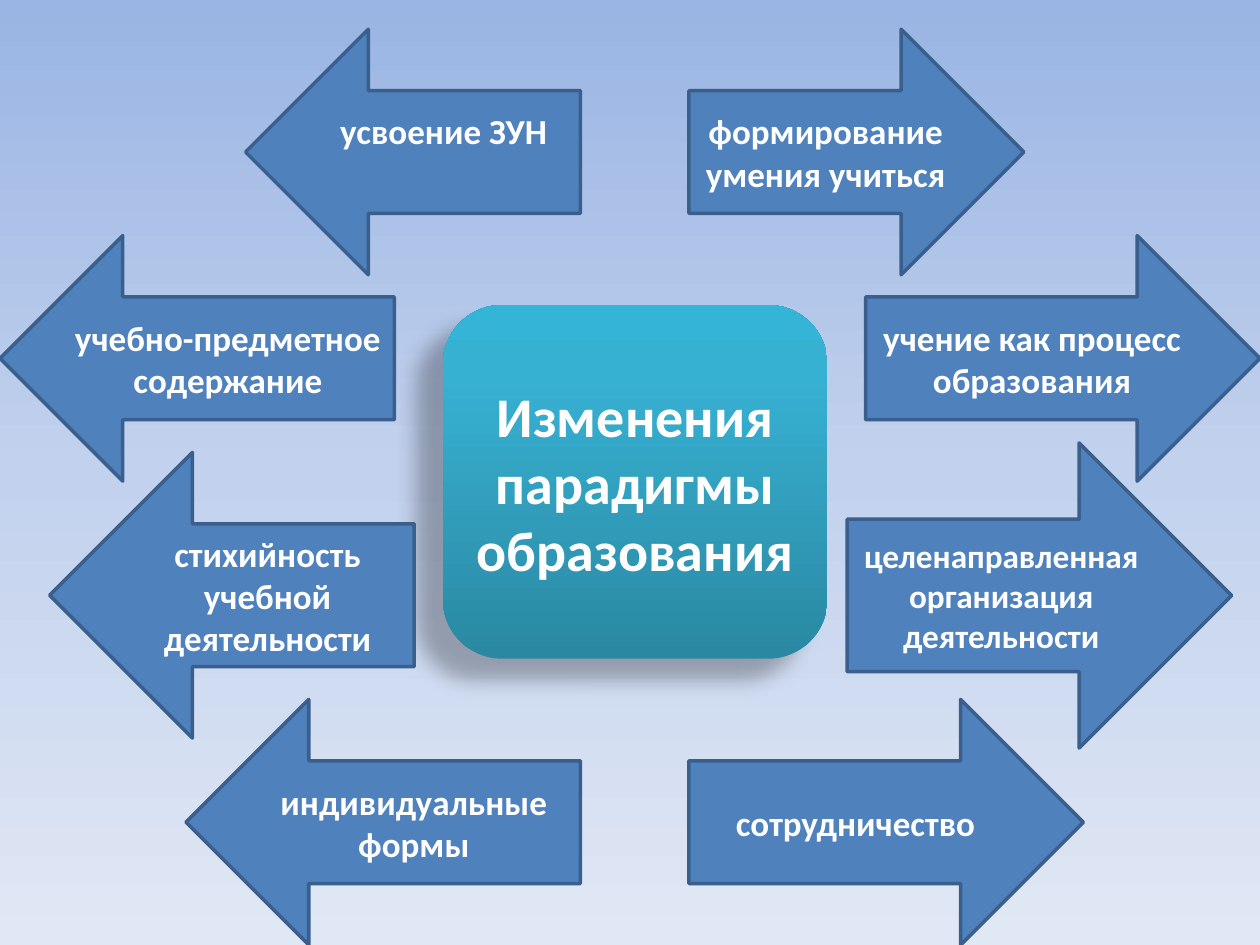
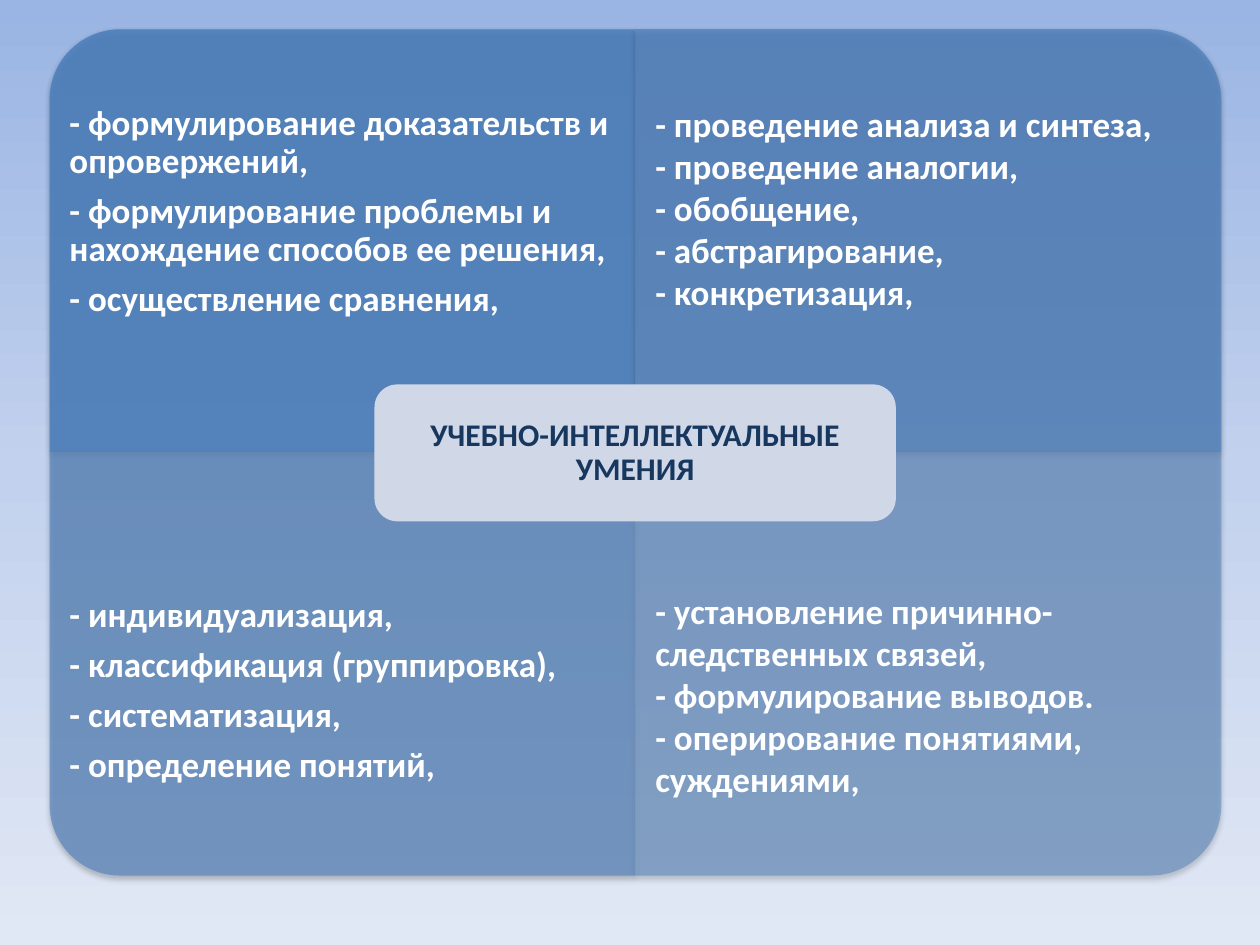
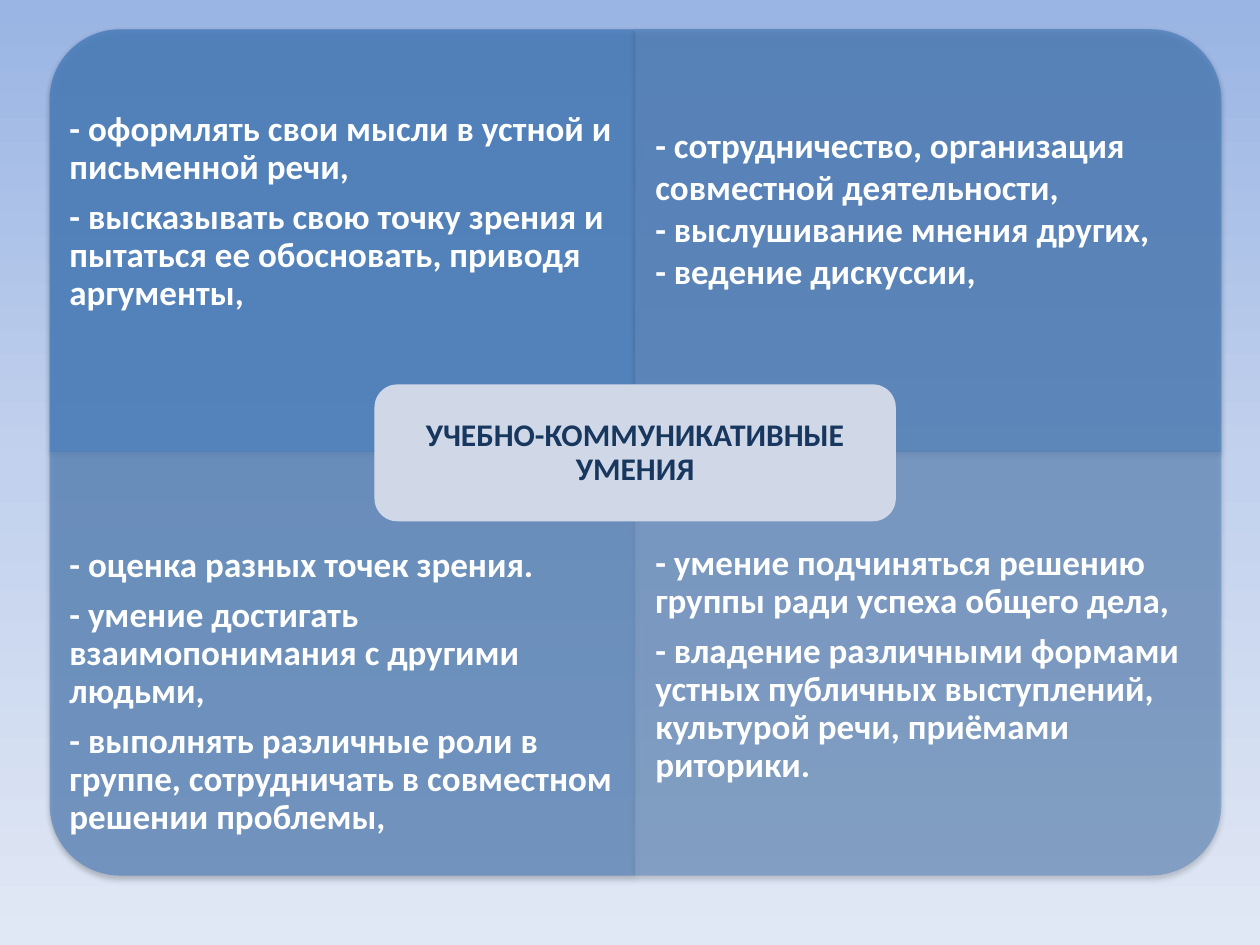
"""Build three slides on the changing paradigm of education and learning skills."""
from dataclasses import dataclass

from lxml import etree
from pptx import Presentation
from pptx.dml.color import RGBColor
from pptx.enum.shapes import MSO_SHAPE
from pptx.enum.text import MSO_ANCHOR, MSO_AUTO_SIZE, PP_ALIGN
from pptx.oxml.ns import qn
from pptx.util import Cm, Pt

LEFT_ARROW, RIGHT_ARROW = MSO_SHAPE.LEFT_ARROW, MSO_SHAPE.RIGHT_ARROW
CENTRE_BOX = MSO_SHAPE.FLOWCHART_ALTERNATE_PROCESS
CORNER_PANEL = MSO_SHAPE.ROUND_1_RECTANGLE
LABEL_BOX = MSO_SHAPE.ROUNDED_RECTANGLE
TOP, MIDDLE = MSO_ANCHOR.TOP, MSO_ANCHOR.MIDDLE
LEFT, CENTER = PP_ALIGN.LEFT, PP_ALIGN.CENTER
NO_AUTOFIT = MSO_AUTO_SIZE.NONE

FONT = "Calibri"
WHITE, NAVY = "FFFFFF", "17375E"
BLUE, BLUE_EDGE, PALE_BLUE = "4F81BD", "3A5F8C", "D0D8E8"
SKY = [(0, "9AB5E4"), (50, "C2D1ED"), (100, "E1E8F5")]
TEAL = [(0, "2A88A2"), (80, "37B1D2"), (100, "34B4D6")]

BLANK_LAYOUT, COMPARISON_LAYOUT = 6, 4
GRID_LEFT, GRID_TOP = 1.0, 0.59
PANEL_WIDTH, PANEL_HEIGHT, LIST_HEIGHT = 11.81, 8.53, 6.4
PANEL_STYLES = [(270, 90), (0, 77), (180, 63), (90, 50)]
LABEL = (7.55, 7.75, 10.51, 2.76)
LABEL_MARGIN = 0.13


@dataclass
class Arrow:
    """An arrow naming one feature of the old or the new paradigm."""
    text: str
    direction: int
    left: float
    top: float
    width: float
    height: float = 4.95
    size: float = 20
    bottom_inset: float = 0.13


@dataclass
class SkillList:
    """The skills in one panel; text_top is where the first line begins."""
    text_top: float
    skills: list[str]
    tight: bool = True


ARROWS = [
    Arrow("формирование умения учиться", RIGHT_ARROW, 13.89, 0.59, 6.75),
    Arrow("усвоение ЗУН", LEFT_ARROW, 4.95, 0.59, 6.75, bottom_inset=0.99),
    Arrow("учебно-предметное содержание", LEFT_ARROW, 0, 4.75, 7.95),
    Arrow("стихийность учебной деятельности", LEFT_ARROW, 1, 9.12, 7.35, 5.76),
    Arrow("учение как процесс образования", RIGHT_ARROW, 17.45, 4.75, 7.95),
    Arrow("целенаправленная организация деятельности", RIGHT_ARROW,
          17.08, 8.93, 7.75, 6.15, size=19),
    Arrow("индивидуальные формы", LEFT_ARROW, 3.75, 14.1, 7.95),
    Arrow("сотрудничество", RIGHT_ARROW, 13.89, 14.1, 7.95),
]

SKILL_SLIDES = {
    "УЧЕБНО-ИНТЕЛЛЕКТУАЛЬНЫЕ УМЕНИЯ": [
        SkillList(2.13, [
            "- формулирование доказательств и опровержений,",
            "- формулирование проблемы и нахождение способов ее решения,",
            "- осуществление сравнения,"]),
        SkillList(2.06, [
            "- проведение анализа и синтеза,",
            "- проведение аналогии,",
            "- обобщение,",
            "- абстрагирование,",
            "- конкретизация,"], tight=False),
        SkillList(12.04, [
            "- индивидуализация,",
            "- классификация (группировка),",
            "- систематизация,",
            "- определение понятий,"]),
        SkillList(11.88, [
            "- установление причинно-следственных связей,",
            "- формулирование выводов.",
            "- оперирование понятиями, суждениями,"], tight=False),
    ],
    "УЧЕБНО-КОММУНИКАТИВНЫЕ УМЕНИЯ": [
        SkillList(2.25, [
            "- оформлять свои мысли в устной и письменной речи,",
            "- высказывать свою точку зрения и пытаться ее обосновать, "
            "приводя аргументы,"]),
        SkillList(2.49, [
            "- сотрудничество, организация совместной деятельности,",
            "- выслушивание мнения других,",
            "- ведение дискуссии,"], tight=False),
        SkillList(11.04, [
            "- оценка разных точек зрения.",
            "- умение достигать взаимопонимания с другими людьми,",
            "- выполнять различные роли в группе, сотрудничать в совместном "
            "решении проблемы,"]),
        SkillList(11.0, [
            "- умение подчиняться решению группы ради успеха общего дела,",
            "- владение различными формами устных публичных выступлений, "
            "культурой речи, приёмами риторики."]),
    ],
}


def rgb(value: str) -> RGBColor:
    """Turn a hex string into a colour."""
    return RGBColor.from_string(value)


def add_gradient(parent, stops: list[tuple[int, str]], angle: int) -> None:
    """Replace the solid fill inside parent with a linear gradient."""
    gradient = etree.Element(qn("a:gradFill"), rotWithShape="1")
    stop_list = etree.SubElement(gradient, qn("a:gsLst"))
    for position, color in stops:
        stop = etree.SubElement(stop_list, qn("a:gs"), pos=str(position * 1000))
        etree.SubElement(stop, qn("a:srgbClr"), val=color)
    etree.SubElement(gradient, qn("a:lin"), ang=str(angle * 60000), scaled="0")
    parent.replace(parent.find(qn("a:solidFill")), gradient)


def add_shadow(shape, opacity: int, blur: float, distance: float, angle: int) -> None:
    """Give a shape a black outer shadow."""
    effects = shape.element.spPr.find(qn("a:effectLst"))
    shadow = etree.SubElement(
        effects, qn("a:outerShdw"), blurRad=str(Pt(blur)), dist=str(Pt(distance)),
        dir=str(angle * 60000), rotWithShape="0")
    color = etree.SubElement(shadow, qn("a:srgbClr"), val="000000")
    etree.SubElement(color, qn("a:alpha"), val=str(opacity * 1000))


def add_box(slide, kind: int, left: float, top: float, width: float, height: float,
            fill: str, edge: str = ""):
    """Draw a filled preset shape, measured in centimetres."""
    box = slide.shapes.add_shape(kind, Cm(left), Cm(top), Cm(width), Cm(height))
    box.shadow.inherit = False
    box.fill.solid()
    box.fill.fore_color.rgb = rgb(fill)
    if edge:
        box.line.color.rgb = rgb(edge)
        box.line.width = Pt(2)
    else:
        box.line.fill.background()
    return box


def write_text(shape, lines: list[str], *, size: float = 20, color: str = WHITE,
               align: int = CENTER, anchor: int = MIDDLE, spacing: float = 1.0,
               gap: float = 0, insets: tuple = (0.25, 0.13, 0.25, 0.13)) -> None:
    """Write bold paragraphs without bullets into a shape."""
    frame = shape.text_frame
    frame.word_wrap = True
    frame.auto_size = NO_AUTOFIT
    frame.vertical_anchor = anchor
    (frame.margin_left, frame.margin_top,
     frame.margin_right, frame.margin_bottom) = map(Cm, insets)
    for number, line in enumerate(lines):
        paragraph = frame.add_paragraph() if number else frame.paragraphs[0]
        properties = paragraph._p.get_or_add_pPr()
        properties.set("marL", "0")
        properties.set("indent", "0")
        etree.SubElement(properties, qn("a:buNone"))
        paragraph.alignment = align
        paragraph.line_spacing = spacing
        paragraph.space_before = Pt(0)
        paragraph.space_after = Pt(gap)
        run = paragraph.add_run()
        run.text = line
        run.font.name = FONT
        run.font.size = Pt(size)
        run.font.bold = True
        run.font.color.rgb = rgb(color)


def place_on_top(placeholder, left: float, top: float, width: float,
                 height: float) -> None:
    """Move a placeholder to a frame in front of everything drawn so far."""
    placeholder.left, placeholder.top = Cm(left), Cm(top)
    placeholder.width, placeholder.height = Cm(width), Cm(height)
    placeholder.element.getparent().append(placeholder.element)


def add_panel(slide, left: float, top: float, rotation: int, opacity: int) -> None:
    """Draw a quarter panel whose rounded corner faces outwards."""
    width, height = PANEL_WIDTH, PANEL_HEIGHT
    if rotation % 180:
        left += (width - height) / 2
        top += (height - width) / 2
        width, height = height, width
    panel = add_box(slide, CORNER_PANEL, left, top, width, height, BLUE)
    panel.rotation = rotation
    color = panel.element.spPr.find(qn("a:solidFill"))[0]
    etree.SubElement(color, qn("a:alpha"), val=str(opacity * 1000))
    add_shadow(panel, 35, 3.1, 1.8, 90)


def add_paradigm_slide(prs) -> None:
    """Show the paradigm in the centre, with arrows to the old and new features."""
    slide = prs.slides.add_slide(prs.slide_layouts[BLANK_LAYOUT])
    centre = add_box(slide, CENTRE_BOX, 8.93, 6.15, 7.75, 7.13, TEAL[0][1])
    add_gradient(centre.element.spPr, TEAL, 270)
    add_shadow(centre, 28, 11.8, 19.7, 141)
    write_text(centre, ["Изменения парадигмы образования"], size=32)
    for item in ARROWS:
        arrow = add_box(slide, item.direction, item.left, item.top,
                        item.width, item.height, BLUE, BLUE_EDGE)
        write_text(arrow, [item.text], size=item.size,
                   insets=(0.25, 0.13, 0.25, item.bottom_inset))


def add_skills_slide(prs, title: str, skill_lists: list[SkillList]) -> None:
    """Show four panels of skills around a central title."""
    slide = prs.slides.add_slide(prs.slide_layouts[COMPARISON_LAYOUT])
    heading, *bodies = list(slide.placeholders)
    for number, (body, skill_list) in enumerate(zip(bodies, skill_lists)):
        row, column = divmod(number, 2)
        left = GRID_LEFT + column * PANEL_WIDTH
        top = GRID_TOP + row * PANEL_HEIGHT
        add_panel(slide, left, top, *PANEL_STYLES[number])
        list_top = min(top + row * (PANEL_HEIGHT - LIST_HEIGHT), skill_list.text_top)
        place_on_top(body, left, list_top, PANEL_WIDTH, LIST_HEIGHT)
        write_text(body, skill_list.skills, align=LEFT, anchor=TOP,
                   spacing=0.9 if skill_list.tight else 1.0,
                   gap=7 if skill_list.tight else 0,
                   insets=(0.4, skill_list.text_top - list_top, 0.4, 0))
    add_box(slide, LABEL_BOX, *LABEL, PALE_BLUE)
    left, top, width, height = LABEL
    place_on_top(heading, left + LABEL_MARGIN, top + LABEL_MARGIN,
                 width - 2 * LABEL_MARGIN, height - 2 * LABEL_MARGIN)
    write_text(heading, [title], size=18, color=NAVY, spacing=0.9, insets=(0.18,) * 4)


def main() -> None:
    """Build the presentation and save it."""
    prs = Presentation()
    prs.slide_width, prs.slide_height = Cm(25.4), Cm(19.05)
    master = prs.slide_master
    master.background.fill.solid()
    add_gradient(master.element.find(f".//{qn('p:bgPr')}"), SKY, 90)
    add_paradigm_slide(prs)
    for title, skill_lists in SKILL_SLIDES.items():
        add_skills_slide(prs, title, skill_lists)
    prs.save("out.pptx")


if __name__ == "__main__":
    main()
